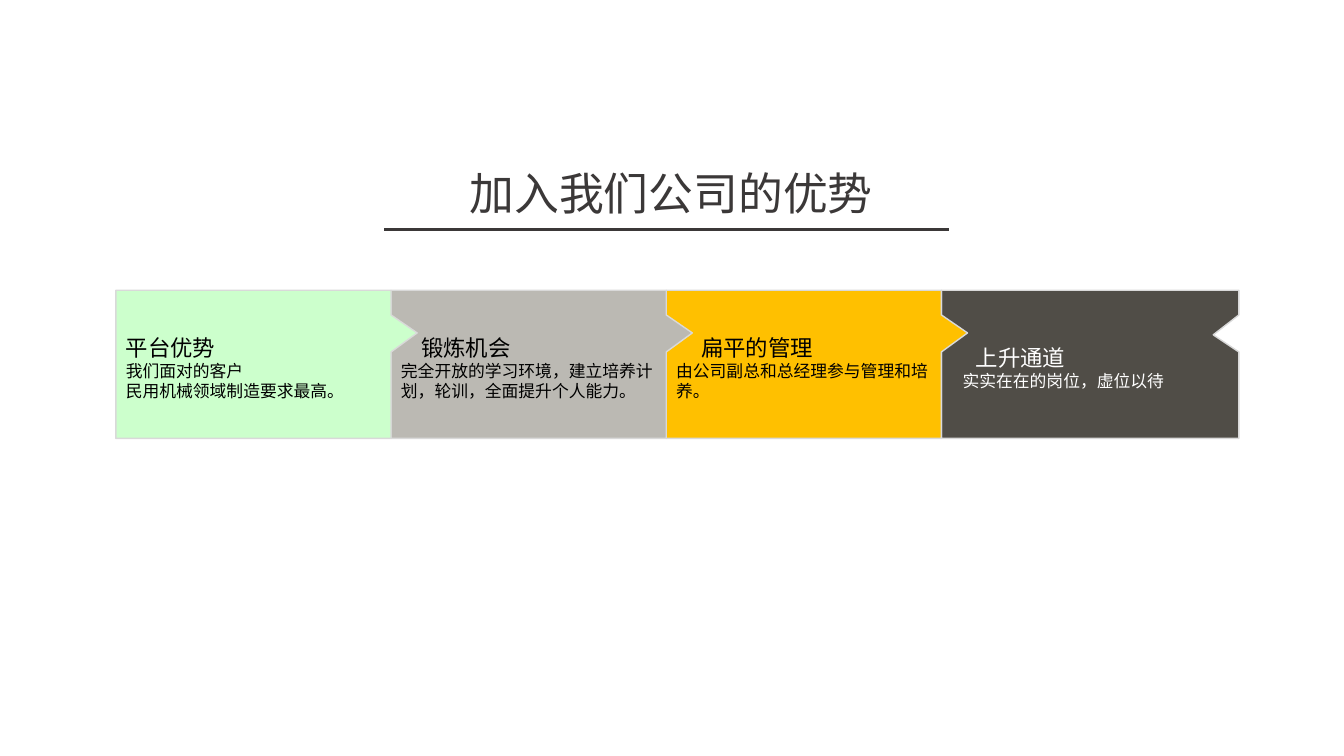
from dataclasses import dataclass

from lxml.etree import SubElement
from pptx import Presentation
from pptx.dml.color import RGBColor
from pptx.enum.shapes import MSO_CONNECTOR, MSO_SHAPE
from pptx.enum.text import MSO_ANCHOR, MSO_AUTO_SIZE, PP_ALIGN
from pptx.oxml.ns import qn
from pptx.util import Pt


@dataclass(frozen=True)
class Theme:
    font: str = "Noto Sans CJK SC"
    ink: str = "3B3838"
    border: str = "D9D9D9"
    black: str = "000000"
    white: str = "FFFFFF"
    title_size: int = 32
    heading_size: int = 16
    body_size: int = 12


THEME = Theme()
TITLE = "加入我们公司的优势"
ADVANTAGES = [
    {"heading": "平台优势", "body": ["我们面对的客户", "民用机械领域制造要求最高。"],
     "fill": "CCFFCC", "ink": THEME.black, "indents": (0, 0),
     "width": 196.56, "tip": (0.595, -0.212)},
    {"heading": "锻炼机会", "body": ["完全开放的学习环境，建立培养计划，轮训，全面提升个人能力。"],
     "fill": "BBB9B3", "ink": THEME.black, "indents": (14.4, 0),
     "width": 196.56, "tip": (0.595, -0.212)},
    {"heading": "扁平的管理", "body": ["由公司副总和总经理参与管理和培养。"],
     "fill": "FFC000", "ink": THEME.black, "indents": (18, 0),
     "width": 196.56, "tip": (0.595, -0.212)},
    {"heading": "上升通道", "body": ["实实在在的岗位，虚位以待"],
     "fill": "504D47", "ink": THEME.white, "indents": (17.5, 8),
     "width": 212.4, "tip": (0.414, -0.199)},
]
ROW_LEFT, ROW_TOP, ROW_HEIGHT = 82.8, 207.36, 105.84


def style(paragraph, size, color, align, indent=0):
    properties = paragraph._p.get_or_add_pPr()
    properties.set("marL", str(Pt(indent)))
    properties.set("indent", "0")
    paragraph.alignment = align
    paragraph.font.size = Pt(size)
    paragraph.font.color.rgb = RGBColor.from_string(color)
    paragraph.font.name = THEME.font
    SubElement(properties.find(qn("a:defRPr")), qn("a:ea"), typeface=THEME.font)


def add_title(slide):
    title = slide.shapes.title
    title.left, title.top, title.width, title.height = map(Pt, (261.36, 114.48, 436.32, 46.08))
    frame = title.text_frame
    frame.text = TITLE
    frame.word_wrap = True
    frame.auto_size = MSO_AUTO_SIZE.NONE
    frame.vertical_anchor = MSO_ANCHOR.MIDDLE
    style(frame.paragraphs[0], THEME.title_size, THEME.ink, PP_ALIGN.CENTER)

    underline = slide.shapes.add_connector(
        MSO_CONNECTOR.STRAIGHT, Pt(274.32), Pt(163.8), Pt(677.52), Pt(163.8))
    underline.line.color.rgb = RGBColor.from_string(THEME.ink)
    underline.line.width = Pt(2)
    SubElement(underline._element.spPr, qn("a:effectLst"))


def add_advantage(slide, advantage, left):
    callout = slide.shapes.add_shape(
        MSO_SHAPE.RECTANGULAR_CALLOUT,
        Pt(left), Pt(ROW_TOP), Pt(advantage["width"]), Pt(ROW_HEIGHT))
    callout.adjustments[0], callout.adjustments[1] = advantage["tip"]
    callout.shadow.inherit = False
    callout.fill.solid()
    callout.fill.fore_color.rgb = RGBColor.from_string(advantage["fill"])
    callout.line.color.rgb = RGBColor.from_string(THEME.border)
    callout.line.width = Pt(1)

    frame = callout.text_frame
    frame.word_wrap = True
    frame.vertical_anchor = MSO_ANCHOR.MIDDLE
    frame.margin_left = frame.margin_right = Pt(7.2)
    frame.margin_top, frame.margin_bottom = Pt(8), Pt(3.6)
    frame.text = "\n".join([advantage["heading"], *advantage["body"]])
    heading, *body = frame.paragraphs
    heading_indent, body_indent = advantage["indents"]
    style(heading, THEME.heading_size, advantage["ink"], PP_ALIGN.LEFT, heading_indent)
    for paragraph in body:
        style(paragraph, THEME.body_size, advantage["ink"], PP_ALIGN.LEFT, body_indent)


def main():
    """Build the slide on the advantages of joining the company."""
    presentation = Presentation()
    presentation.slide_width, presentation.slide_height = Pt(960), Pt(540)
    slide = presentation.slides.add_slide(presentation.slide_layouts[5])
    add_title(slide)
    right = ROW_LEFT + sum(advantage["width"] for advantage in ADVANTAGES)
    for advantage in reversed(ADVANTAGES):
        right -= advantage["width"]
        add_advantage(slide, advantage, right)
    presentation.save("out.pptx")


if __name__ == "__main__":
    main()
